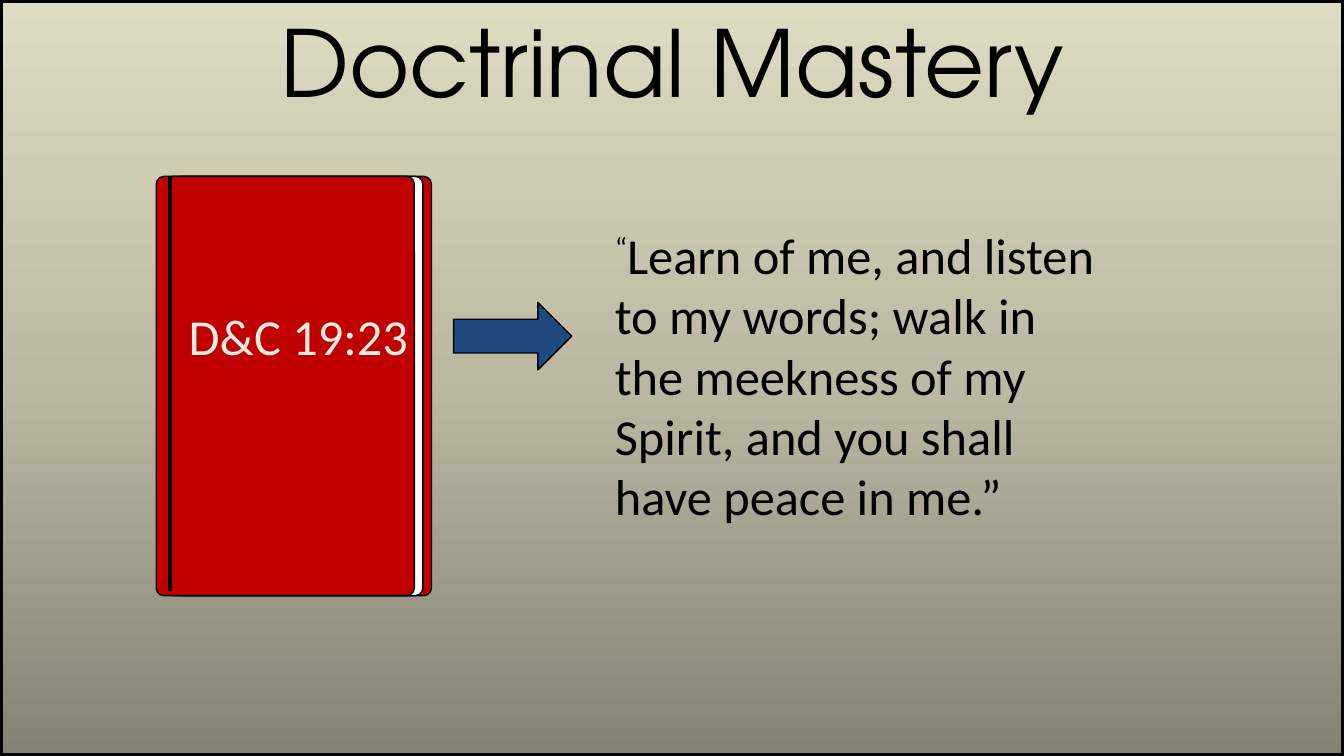
from copy import deepcopy

from lxml.etree import SubElement
from pptx import Presentation
from pptx.dml.color import RGBColor
from pptx.enum.shapes import MSO_CONNECTOR, MSO_SHAPE
from pptx.enum.text import MSO_AUTO_SIZE, PP_ALIGN
from pptx.oxml.ns import qn
from pptx.util import Inches, Pt

SLIDE_SIZE = (13.33, 7.5)
BACKDROP = [(0, "848273"), (0.5, "BCB8A3"), (1, "DFDBC2")]
BLACK, WHITE, RED, BLUE, CREAM = "000000", "FFFFFF", "C00000", "1F497D", "EEECE1"

TITLE = "Doctrinal Mastery"
REFERENCE = "D&C 19:23"
OPENING_QUOTE = "“"
VERSE = ("Learn of me, and listen to my words; walk in the meekness of my "
         "Spirit, and you shall have peace in me.”")

BOOK_LEFT, BOOK_TOP, BOOK_WIDTH, BOOK_HEIGHT = 1.55, 1.75, 2.56, 4.16
BOOK_LAYERS = [RED, WHITE, RED]  # back cover, pages, front cover
LAYER_STEP = 0.085
SPINE_X, SPINE_BOTTOM = 1.69, 5.86


def rgb(color):
    return RGBColor.from_string(color)


def add_shape(shapes, kind, box, fill=None, line_width=1):
    sp = shapes.add_shape(kind, *map(Inches, box))
    sp.shadow.inherit = False
    if fill:
        sp.fill.solid()
        sp.fill.fore_color.rgb = rgb(fill)
    sp.line.color.rgb = rgb(BLACK)
    sp.line.width = Pt(line_width)
    return sp


def add_text(shapes, box, runs, size, font="Calibri", color=BLACK, align=None):
    tb = shapes.add_textbox(*map(Inches, box))
    tf = tb.text_frame
    tf.word_wrap = True
    tf.auto_size = MSO_AUTO_SIZE.SHAPE_TO_FIT_TEXT
    p = tf.paragraphs[0]
    p.alignment = align
    for text in runs:
        r = p.add_run()
        r.text = text
        r.font.name = font
        r.font.size = Pt(size)
        r.font.color.rgb = rgb(color)
    return p


def add_backdrop(shapes):
    sp = add_shape(shapes, MSO_SHAPE.RECTANGLE, (0, 0, *SLIDE_SIZE), line_width=4)
    sp.fill.gradient()
    sp.fill.gradient_angle = 90
    stops = next(sp._element.iter(qn("a:gsLst")))
    stops.append(deepcopy(stops[0]))
    for stop, (position, color) in zip(sp.fill.gradient_stops, BACKDROP):
        stop.position = position
        stop.color.rgb = rgb(color)


def add_book(shapes):
    book = shapes.add_group_shape().shapes
    last = len(BOOK_LAYERS) - 1
    for i, color in enumerate(BOOK_LAYERS):
        left = BOOK_LEFT + (last - i) * LAYER_STEP
        sp = add_shape(book, MSO_SHAPE.ROUNDED_RECTANGLE,
                       (left, BOOK_TOP, BOOK_WIDTH, BOOK_HEIGHT), color)
        sp.adjustments[0] = 0.03
    add_text(book, (1.18, 2.98, 3.56, 0.71), [REFERENCE], 36,
             color=CREAM, align=PP_ALIGN.CENTER)
    spine = book.add_connector(MSO_CONNECTOR.STRAIGHT, Inches(SPINE_X), Inches(SPINE_BOTTOM),
                               Inches(SPINE_X), Inches(BOOK_TOP))
    spine.line.color.rgb = rgb(BLACK)
    spine.line.width = Pt(3)
    SubElement(spine._element.spPr, qn("a:effectLst"))


def main():
    prs = Presentation()
    prs.slide_width, prs.slide_height = map(Inches, SLIDE_SIZE)
    s = prs.slides.add_slide(prs.slide_layouts[6])

    add_backdrop(s.shapes)
    verse = add_text(s.shapes, (6, 2.17, 5, 3.13), [OPENING_QUOTE, VERSE], 36)
    verse.runs[0].font._element.set("baseline", "30000")
    add_book(s.shapes)
    add_shape(s.shapes, MSO_SHAPE.RIGHT_ARROW, (4.5, 3, 1.17, 0.67), BLUE)
    add_text(s.shapes, (1.67, 0, 10, 1.21), [TITLE], 66,
             font="TeX Gyre Adventor", align=PP_ALIGN.CENTER)

    prs.save("out.pptx")


if __name__ == "__main__":
    main()
